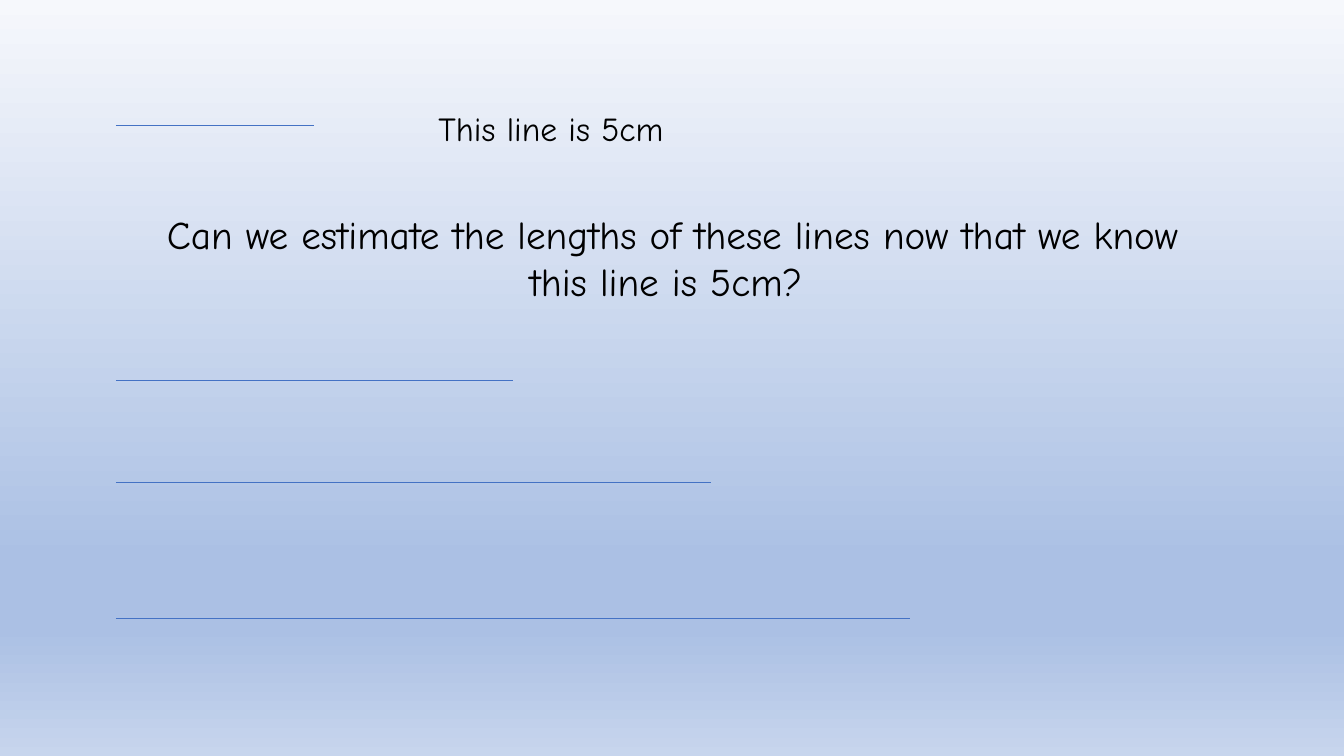
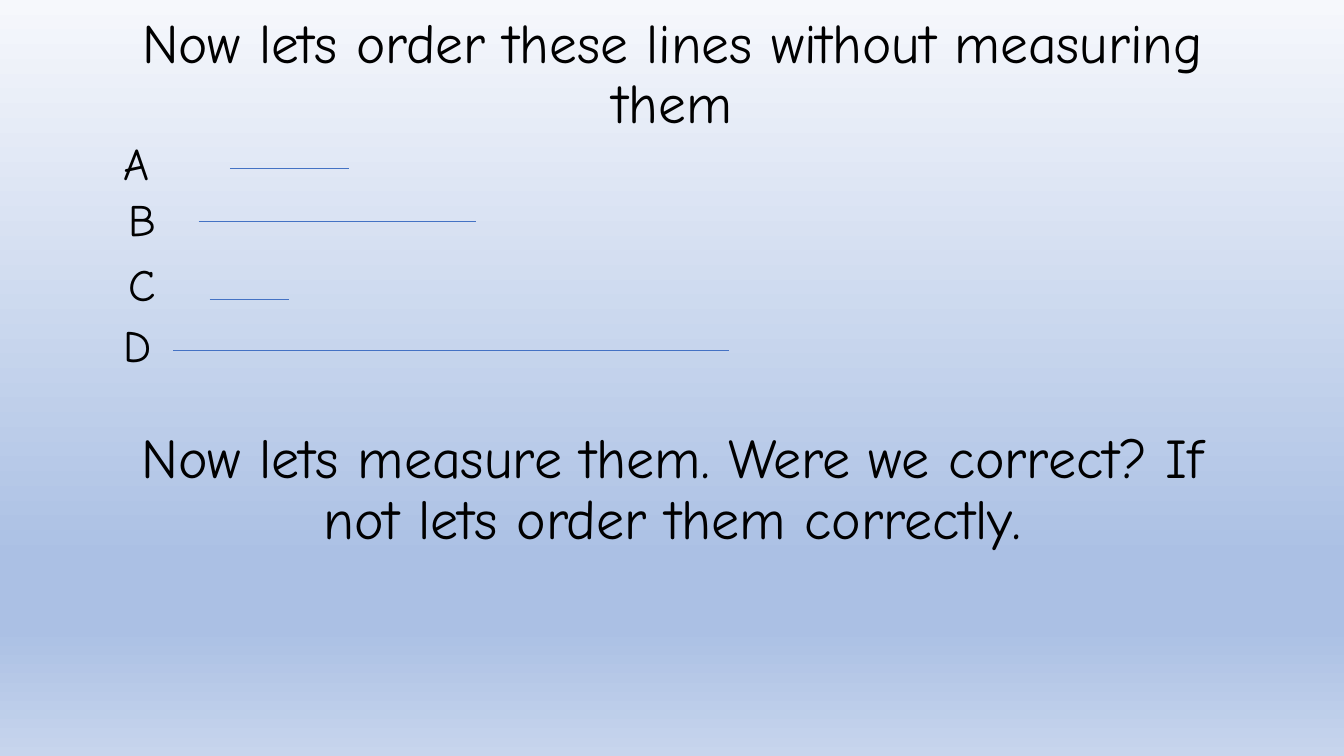
"""Builds two slides on estimating, ordering and measuring lines."""
from pptx import Presentation
from pptx.dml.color import RGBColor
from pptx.enum.shapes import MSO_CONNECTOR
from pptx.enum.text import MSO_ANCHOR, PP_ALIGN
from pptx.oxml.ns import qn
from pptx.util import Inches, Pt
from lxml import etree

LEFT, CENTER = PP_ALIGN.LEFT, PP_ALIGN.CENTER
MIDDLE = MSO_ANCHOR.MIDDLE
STRAIGHT = MSO_CONNECTOR.STRAIGHT
FONT, INK, BLUE = "Comic Neue", "000000", "4472C4"
STOPS = [(0, "F6F8FC"), (74, "ABC0E4"), (83, "ABC0E4"), (100, "C7D5ED")]


def add_text(slide, text, x, y, w, h, size, align=LEFT, space=1.0):
    box = slide.shapes.add_textbox(Inches(x), Inches(y), Inches(w), Inches(h))
    frame = box.text_frame
    frame.word_wrap = True
    frame.vertical_anchor = MIDDLE
    para = frame.paragraphs[0]
    para.text = text
    para.alignment = align
    para.line_spacing = space
    para.font.name = FONT
    para.font.size = Pt(size)
    para.font.color.rgb = RGBColor.from_string(INK)


def add_line(slide, x, y, cm):
    end = x + cm / 2.54
    line = slide.shapes.add_connector(
        STRAIGHT, Inches(x), Inches(y), Inches(end), Inches(y))
    line.line.color.rgb = RGBColor.from_string(BLUE)
    line.line.width = Pt(0.5)
    etree.SubElement(line._element.spPr, qn("a:effectLst"))


prs = Presentation()
prs.slide_width, prs.slide_height = Inches(13.33), Inches(7.5)
blank = prs.slide_layouts[6]

master = prs.slide_master
fill = master.background.fill
fill.gradient()
fill.gradient_angle = 270
stops = master.element.find(".//" + qn("a:gsLst"))
for stop in list(stops):
    stops.remove(stop)
for pos, color in STOPS:
    stop = etree.SubElement(stops, qn("a:gs"), pos=str(pos * 1000))
    etree.SubElement(stop, qn("a:srgbClr"), val=color)

slide = prs.slides.add_slide(blank)
for y, cm in [(1.24, 5), (3.77, 10), (4.79, 15), (6.13, 20)]:
    add_line(slide, 1.15, y, cm)
add_text(slide, "This line is 5cm", 4.25, 1.02, 2.92, 0.5, 24)
add_text(slide, "Can we estimate the lengths of these lines now that we know "
         "this line is 5cm? ", 1.44, 2.03, 10.46, 1.04, 28, CENTER)

slide = prs.slides.add_slide(blank)
add_text(slide, "Now lets order these lines without measuring them",
         0.92, 0.15, 11.5, 1.2, 39.6, CENTER, 0.9)
add_text(slide, "Now lets measure them. Were we correct? "
         "If not lets order them correctly.",
         0.92, 4.27, 11.5, 1.2, 40, CENTER, 0.9)
rows = [
    ("A", 1.13, 1.29, 2.28, 1.67, 3),
    ("B", 1.18, 1.85, 1.97, 2.2, 7),
    ("C", 1.18, 2.49, 2.08, 2.97, 2),
    ("D", 1.13, 3.1, 1.72, 3.48, 14),
]
for name, left, top, x, y, cm in rows:
    add_text(slide, name, left, top, 0.79, 0.64, 32)
    add_line(slide, x, y, cm)

prs.save("out.pptx")
